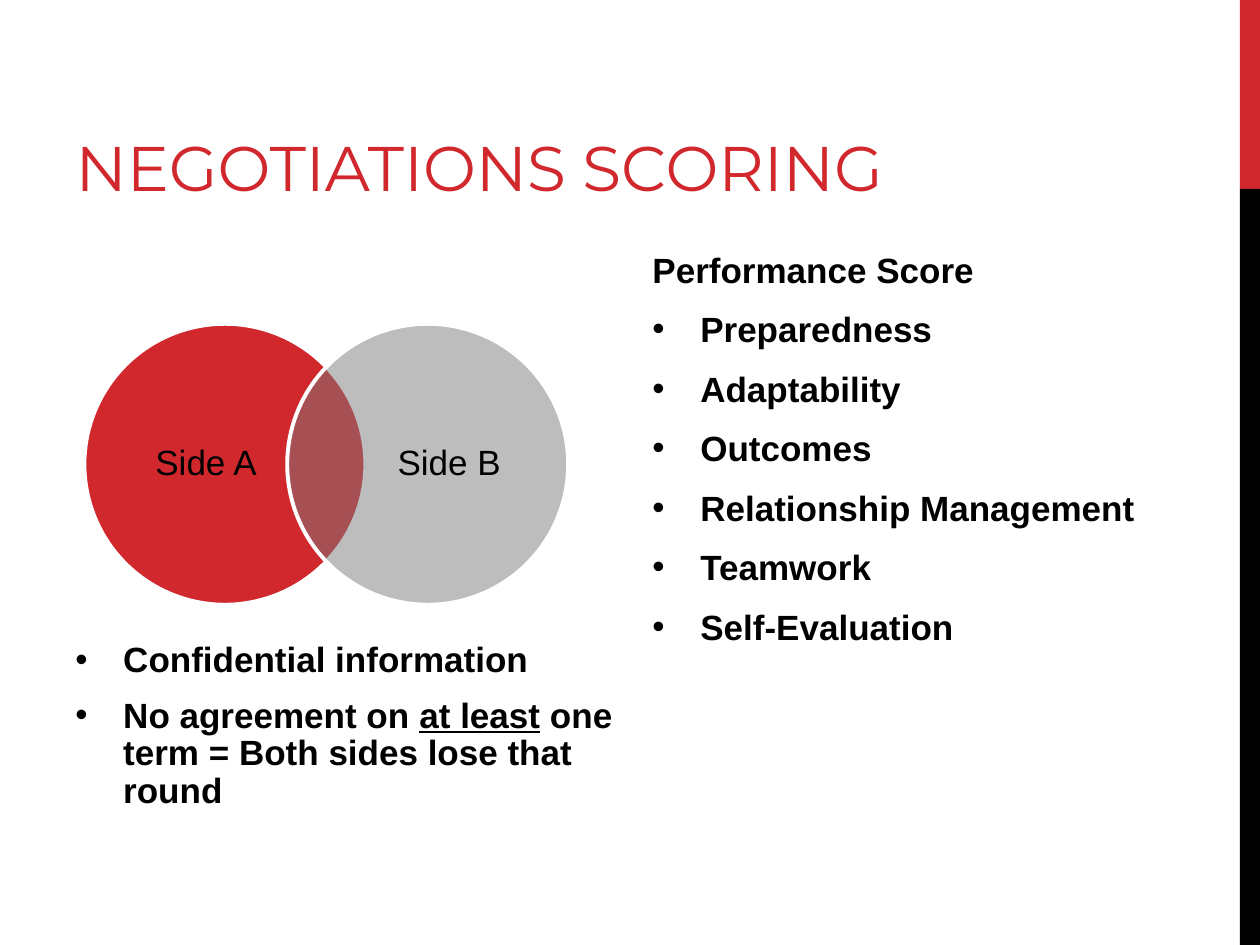
from lxml.etree import SubElement
from pptx import Presentation
from pptx.dml.color import RGBColor
from pptx.enum.shapes import MSO_SHAPE
from pptx.enum.text import MSO_ANCHOR, PP_ALIGN
from pptx.oxml.ns import qn
from pptx.util import Inches, Pt

RED, BLACK, WHITE, GRAY = "D1282E", "000000", "FFFFFF", "7A7A7A"


def color(value):
    return RGBColor.from_string(value)


class SlideBuilder:
    def __init__(self, prs):
        self.s = prs.slides.add_slide(prs.slide_layouts[5])
        self.font, self.title_font, self.size = "Arial", "Montserrat", 20

    def run(self, p, text, size=None, font=None, fill=BLACK, bold=False, underline=False):
        r = p.add_run()
        r.text = text
        f = r.font
        f.size, f.name = Pt(size or self.size), font or self.font
        f.bold, f.underline = bold, underline
        f.color.rgb = color(fill)

    def title(self, text, x, y, w, h):
        sp = self.s.shapes.title
        sp.left, sp.top, sp.width, sp.height = map(Inches, (x, y, w, h))
        tf = sp.text_frame
        tf.word_wrap, tf.vertical_anchor = True, MSO_ANCHOR.BOTTOM
        p = tf.paragraphs[0]
        p.alignment = PP_ALIGN.LEFT
        self.run(p, text, 36, self.title_font, RED)

    def shape(self, kind, x, y, w, h, fill, line=None, alpha=None):
        """Draw a filled shape; alpha is the opacity in percent."""
        sp = self.s.shapes.add_shape(kind, *map(Inches, (x, y, w, h)))
        sp.shadow.inherit = False
        sp.fill.solid()
        sp.fill.fore_color.rgb = color(fill)
        if alpha:
            clr = sp.fill._xPr.find(qn("a:solidFill"))[0]
            SubElement(clr, qn("a:alpha"), val=str(alpha * 1000))
        if line:
            sp.line.color.rgb = color(line)
            sp.line.width = Pt(2.25)
        else:
            sp.line.fill.background()

    def text_frame(self, x, y, w, h):
        tf = self.s.shapes.add_textbox(*map(Inches, (x, y, w, h))).text_frame
        tf.word_wrap = True
        return tf

    def label(self, text, x, y, w, h):
        tf = self.text_frame(x, y, w, h)
        tf.margin_left = tf.margin_right = tf.margin_top = tf.margin_bottom = 0
        tf.vertical_anchor = MSO_ANCHOR.MIDDLE
        p = tf.paragraphs[0]
        p.alignment, p.line_spacing = PP_ALIGN.CENTER, 0.9
        self.run(p, text)

    def bullet(self, p):
        pPr = p._p.get_or_add_pPr()
        indent = Inches(0.38)
        pPr.set("marL", str(indent))
        pPr.set("indent", str(-indent))
        clr = SubElement(pPr, qn("a:buClr"))
        SubElement(clr, qn("a:srgbClr"), val=BLACK)
        SubElement(pPr, qn("a:buFont"), typeface=self.font)
        SubElement(pPr, qn("a:buChar"), char="•")

    def bullet_list(self, items, x, y, w, h, heading=None, spacing=1.0):
        """Write bold bullets; each item is a list of (text, underlined) runs."""
        tf = self.text_frame(x, y, w, h)
        rows = [[(heading, False)]] if heading else []
        for i, runs in enumerate(rows + items):
            p = tf.add_paragraph() if i else tf.paragraphs[0]
            p.line_spacing = spacing
            p.space_before = Pt(10 if i else 0)
            if i or not heading:
                self.bullet(p)
            for text, underline in runs:
                self.run(p, text, bold=True, underline=underline)


def main():
    prs = Presentation()
    prs.slide_width, prs.slide_height = Inches(10), Inches(7.5)
    b = SlideBuilder(prs)

    b.shape(MSO_SHAPE.RECTANGLE, 9.84, 0, 0.16, 1.5, RED)
    b.shape(MSO_SHAPE.RECTANGLE, 9.84, 1.5, 0.16, 6, BLACK)
    b.title("NEGOTIATIONS SCORING", 0.5, 0.17, 7.67, 1.5)

    sides = [("Side A", 0.67, 0.99, RED, None), ("Side B", 2.28, 2.92, GRAY, 49)]
    for name, circle_x, label_x, fill, alpha in sides:
        b.shape(MSO_SHAPE.OVAL, circle_x, 2.57, 2.23, 2.23, fill, WHITE, alpha)
        b.label(name, label_x, 2.83, 1.29, 1.71)

    rules = [
        [("Confidential information", False)],
        [("No agreement on ", False), ("at least", True),
         (" one term = Both sides lose that round", False)],
    ]
    b.bullet_list(rules, 0.5, 5.05, 4.5, 1.65, spacing=0.9)

    criteria = ["Preparedness", "Adaptability", "Outcomes",
                "Relationship Management", "Teamwork", "Self-Evaluation"]
    b.bullet_list([[(name, False)] for name in criteria], 5.08, 1.92, 4.17, 4.78,
                  heading="Performance Score")

    prs.save("out.pptx")


if __name__ == "__main__":
    main()
